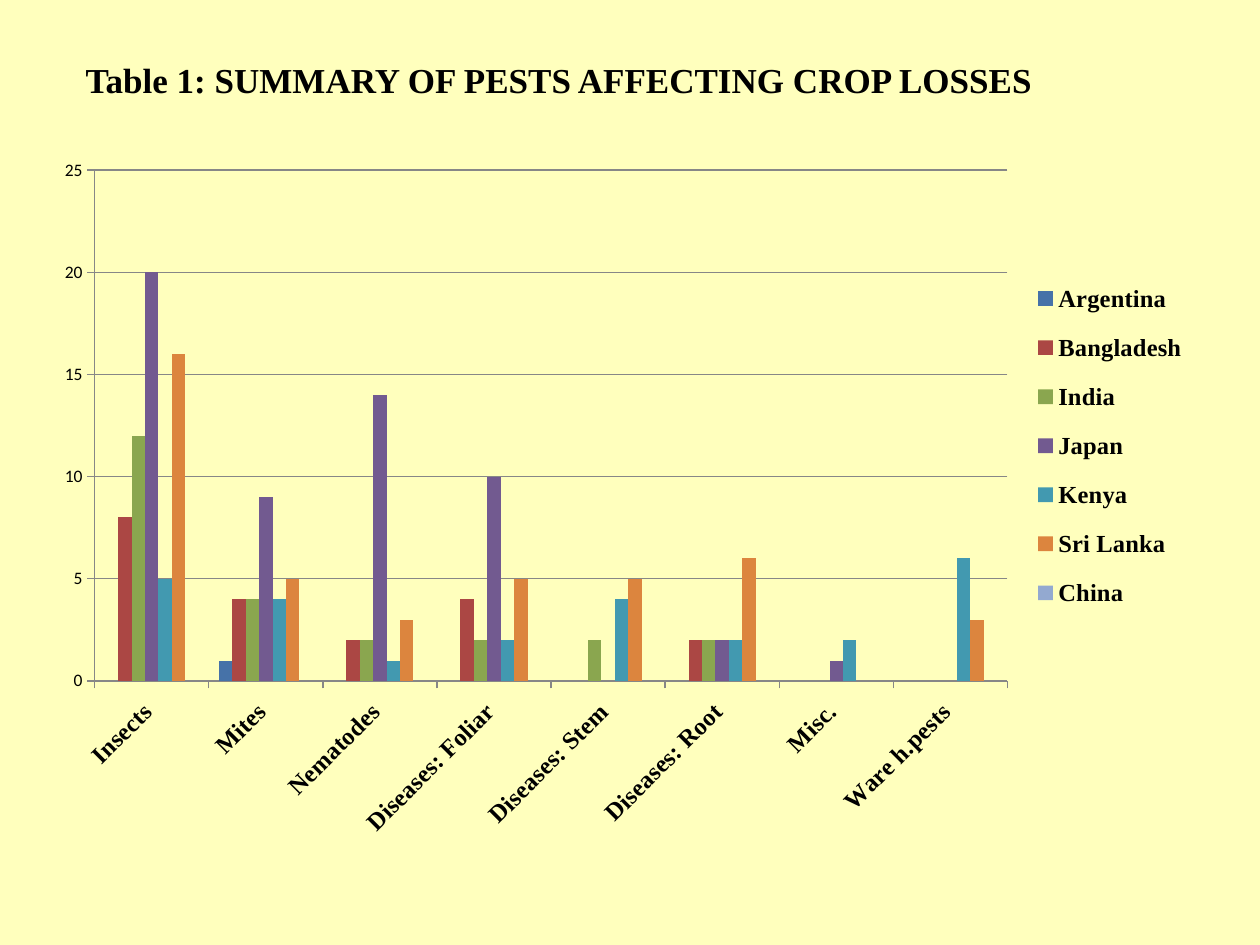
from pptx import Presentation
from pptx.chart.data import CategoryChartData
from pptx.dml.color import RGBColor
from pptx.enum.chart import XL_CHART_TYPE, XL_LEGEND_POSITION, XL_TICK_MARK
from pptx.enum.text import MSO_ANCHOR, PP_ALIGN
from pptx.oxml import parse_xml
from pptx.oxml.ns import nsdecls
from pptx.util import Cm, Pt

SERIF = "Times New Roman"
BLACK = RGBColor(0, 0, 0)
THEME = {
    "background": RGBColor.from_string("FFFFBD"),
    "grid": RGBColor.from_string("878787"),
    "title": {"name": SERIF, "size": Pt(20), "bold": True},
    "labels": {"name": SERIF, "size": Pt(14), "bold": True},
    "numbers": {"name": "Calibri", "size": Pt(10), "bold": False},
}

CHART_WIDTH, CHART_HEIGHT = Cm(23.5), Cm(14.17)

# The trailing space sets the slanted labels off from the axis
PESTS = ["Insects ", "Mites ", "Nematodes ", "Diseases: Foliar ",
         "Diseases: Stem ", "Diseases: Root ", "Misc. ", "Ware h.pests "]
COUNTRIES = [
    ("Argentina ", "4672A8", [None, 1] + [None] * 6),
    ("Bangladesh ", "AB4744", [8, 4, 2, 4, None, 2, None, None]),
    ("India ", "8AA64F", [12, 4, 2, 2, 2, 2, None, None]),
    ("Japan ", "725A90", [20, 9, 14, 10, None, 2, 1, None]),
    ("Kenya ", "4299B0", [5, 4, 1, 2, 4, 2, 2, 6]),
    ("Sri Lanka ", "DC853E", [16, 5, 3, 5, 5, 6, None, 3]),
    ("China ", "93A9D0", [None] * 8),
]


def apply_font(font, style):
    for attribute, value in style.items():
        setattr(font, attribute, value)
    font.color.rgb = BLACK


def set_layout(element, index, target, left, top, width, height):
    """Place a chart part by lengths measured from the chart's corner."""
    for old in element.xpath("c:layout"):
        element.remove(old)
    inner = '<c:layoutTarget val="inner"/>' if target == "inner" else ""
    fractions = {"x": left / CHART_WIDTH, "y": top / CHART_HEIGHT,
                 "w": width / CHART_WIDTH, "h": height / CHART_HEIGHT}
    sizes = "".join(f'<c:{key} val="{value:.4f}"/>'
                    for key, value in fractions.items())
    element.insert(index, parse_xml(
        f'<c:layout {nsdecls("c")}><c:manualLayout>{inner}'
        f'<c:xMode val="edge"/><c:yMode val="edge"/>{sizes}'
        "</c:manualLayout></c:layout>"))


deck = Presentation()
deck.slide_width, deck.slide_height = Cm(25.4), Cm(19.05)
slide = deck.slides.add_slide(deck.slide_layouts[5])
slide.background.fill.solid()
slide.background.fill.fore_color.rgb = THEME["background"]

# Title
heading = slide.shapes.title
heading.left, heading.top, heading.width, heading.height = (
    Cm(1.47), Cm(1.05), Cm(21.16), Cm(1.12))
heading.text_frame.text = "Table 1: SUMMARY OF PESTS AFFECTING CROP LOSSES"
heading.text_frame.vertical_anchor = MSO_ANCHOR.MIDDLE
heading_line = heading.text_frame.paragraphs[0]
heading_line.alignment = PP_ALIGN.LEFT
apply_font(heading_line.runs[0].font, THEME["title"])

# Chart
losses = CategoryChartData()
losses.categories = PESTS
for country, _, counts in COUNTRIES:
    losses.add_series(country, counts)
chart = slide.shapes.add_chart(
    XL_CHART_TYPE.COLUMN_CLUSTERED,
    Cm(0.84), Cm(2.97), CHART_WIDTH, CHART_HEIGHT, losses).chart
chart.has_title = False
apply_font(chart.font, THEME["numbers"])

bars = chart.plots[0]
bars.gap_width, bars.overlap, bars.vary_by_categories = 150, 0, False
for bar_series, (_, color, _) in zip(bars.series, COUNTRIES):
    bar_series.format.fill.solid()
    bar_series.format.fill.fore_color.rgb = RGBColor.from_string(color)
    bar_series.invert_if_negative = False

# Axes
pest_axis, count_axis = chart.category_axis, chart.value_axis
scale = {"minimum_scale": 0, "maximum_scale": 25, "major_unit": 5,
         "has_major_gridlines": True}
for attribute, value in scale.items():
    setattr(count_axis, attribute, value)
for axis, style in ((pest_axis, "labels"), (count_axis, "numbers")):
    axis.major_tick_mark = XL_TICK_MARK.OUTSIDE
    axis.minor_tick_mark = XL_TICK_MARK.NONE
    apply_font(axis.tick_labels.font, THEME[style])
for rule in (pest_axis, count_axis, count_axis.major_gridlines):
    rule.format.line.color.rgb = THEME["grid"]
    rule.format.line.width = Pt(0.75)
pest_axis._element.xpath("c:txPr/a:bodyPr")[0].set("rot", "-2700000")

# Legend
chart.has_legend = True
legend = chart.legend
legend.position = XL_LEGEND_POSITION.RIGHT
legend.include_in_layout = False
apply_font(legend.font, THEME["labels"])

plot_area = chart._chartSpace.xpath("c:chart/c:plotArea")[0]
set_layout(plot_area, 0, "inner", Cm(1.07), Cm(0.46), Cm(18.4), Cm(10.3))
set_layout(legend._element, 1, "outer", Cm(19.95), Cm(2.34), Cm(3.3), Cm(7.36))

deck.save("out.pptx")
